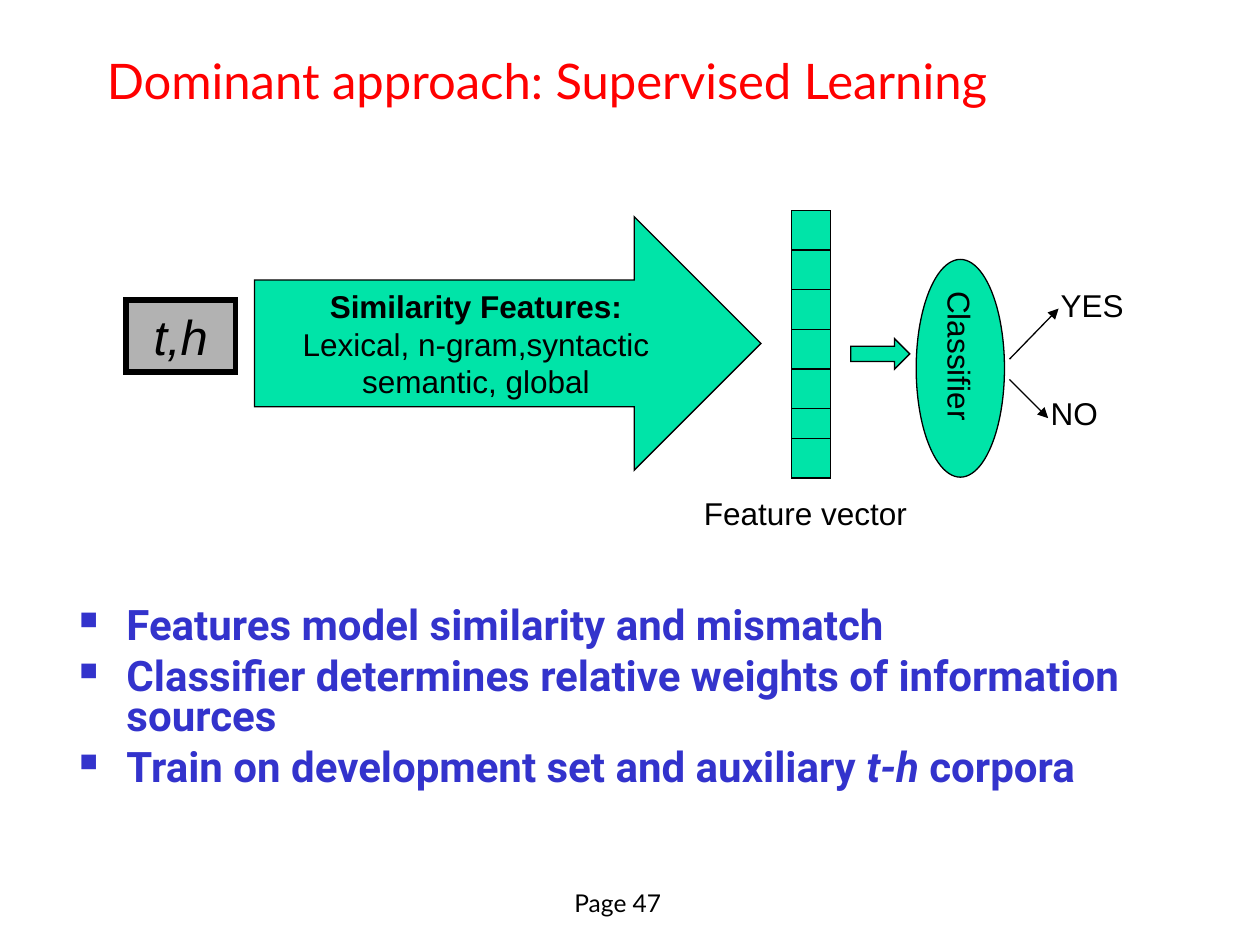
from lxml.etree import SubElement
from pptx import Presentation
from pptx.dml.color import RGBColor
from pptx.enum.shapes import MSO_CONNECTOR, MSO_SHAPE
from pptx.enum.text import MSO_ANCHOR, MSO_AUTO_SIZE, PP_ALIGN
from pptx.oxml.ns import qn
from pptx.util import Cm, Pt

BLACK, GREEN, GREY, RED, BLUE = "000000", "00E4A8", "B2B2B2", "FF0000", "3333CC"

TITLE = "Dominant approach: Supervised Learning"
FEATURES = [("Similarity Features:", True),
            ("Lexical, n-gram,syntactic", False),
            ("semantic, global", False)]
LABELS = [("Feature vector", (13.94, 9.83, 5.79, 1.02)),
          ("YES", (21.13, 5.64, 2.29, 1.02)),
          ("NO", (20.93, 7.82, 2.29, 1.02))]
OUTCOME_ARROWS = [((20.35, 7.24), (21.34, 6.22)),
                  ((20.35, 7.65), (21.13, 8.43))]
BULLETS = [[("Features model similarity and mismatch", False)],
           [("Classifier determines relative weights of information sources", False)],
           [("Train on development set and auxiliary ", False), ("t-h", True),
            (" corpora", False)]]
VECTOR_LEFT, VECTOR_TOP, VECTOR_WIDTH = 15.95, 4.24, 0.8
CELL_HEIGHTS = [0.8] * 5 + [0.6, 0.8]


def rgb(color):
    """Turn a hex string into a colour."""
    return RGBColor.from_string(color)


def style(paragraph, name, size, color=BLACK, bold=False, italic=False):
    """Set the font of a whole paragraph."""
    font = paragraph.font
    font.name, font.size, font.bold, font.italic = name, Pt(size), bold, italic
    font.color.rgb = rgb(color)


def add_block(slide, preset, box, fill=GREEN, line_width=0.75):
    """Add a filled preset shape with a sharp-cornered black outline."""
    block = slide.shapes.add_shape(preset, *map(Cm, box))
    block.shadow.inherit = False
    block.fill.solid()
    block.fill.fore_color.rgb = rgb(fill)
    block.line.color.rgb = rgb(BLACK)
    block.line.width = Pt(line_width)
    SubElement(block.line._get_or_add_ln(), qn("a:miter"), lim="800000")
    return block


def write_centred(block, lines, size=18, italic=False):
    """Write centred (text, bold) lines in a shape."""
    frame = block.text_frame
    for index, (text, bold) in enumerate(lines):
        paragraph = frame.add_paragraph() if index else frame.paragraphs[0]
        paragraph.text = text
        paragraph.alignment = PP_ALIGN.CENTER
        style(paragraph, "Arial", size, bold=bold, italic=italic)


def add_line(slide, start, end, arrow=False):
    """Add a thin black line, with an arrowhead if asked."""
    line = slide.shapes.add_connector(MSO_CONNECTOR.STRAIGHT, *map(Cm, start + end))
    line.line.color.rgb = rgb(BLACK)
    line.line.width = Pt(0.75)
    if arrow:
        SubElement(line.line._get_or_add_ln(), qn("a:tailEnd"), type="triangle")
    SubElement(line._element.spPr, qn("a:effectLst"))


def add_text(slide, box):
    """Add a wrapping text box and return its frame."""
    frame = slide.shapes.add_textbox(*map(Cm, box)).text_frame
    frame.word_wrap = True
    return frame


def add_label(slide, text, box, name="Arial", size=18):
    """Add a one-line black label."""
    frame = add_text(slide, box)
    frame.paragraphs[0].text = text
    style(frame.paragraphs[0], name, size)
    return frame


def add_title(slide):
    """Fill and place the title."""
    title = slide.shapes.title
    title.left, title.top, title.width, title.height = map(Cm, (1.9, -0.84, 21.6, 3.18))
    frame = title.text_frame
    frame.text = TITLE
    frame.auto_size = MSO_AUTO_SIZE.NONE
    frame.vertical_anchor = MSO_ANCHOR.BOTTOM
    frame.paragraphs[0].alignment = PP_ALIGN.LEFT
    style(frame.paragraphs[0], "Lato", 28, RED)


def add_bullets(slide):
    """Add the list of square-bulleted points."""
    frame = add_text(slide, (1.35, 12.14, 22.38, 3.3))
    for index, runs in enumerate(BULLETS):
        paragraph = frame.add_paragraph() if index else frame.paragraphs[0]
        paragraph.line_spacing = 0.8
        paragraph.space_before = Pt(6)
        properties = paragraph._p.get_or_add_pPr()
        properties.set("marL", str(Cm(0.95)))
        properties.set("indent", str(-Cm(0.95)))
        SubElement(SubElement(properties, qn("a:buClr")), qn("a:srgbClr"), val=BLUE)
        SubElement(properties, qn("a:buSzPct"), val="60000")
        SubElement(properties, qn("a:buChar"), char="■")
        style(paragraph, "Roboto", 24, BLUE, bold=True)
        for text, italic in runs:
            run = paragraph.add_run()
            run.text = text
            if italic:
                run.font.italic = True


def add_vector(slide):
    """Add the feature vector and the lines between its cells."""
    add_block(slide, MSO_SHAPE.RECTANGLE,
              (VECTOR_LEFT, VECTOR_TOP, VECTOR_WIDTH, sum(CELL_HEIGHTS)))
    for count in range(1, len(CELL_HEIGHTS)):
        y = VECTOR_TOP + sum(CELL_HEIGHTS[:count])
        add_line(slide, (VECTOR_LEFT, y), (VECTOR_LEFT + VECTOR_WIDTH, y))


def add_classifier(slide):
    """Add the oval with its word running downwards."""
    classifier = add_block(slide, MSO_SHAPE.OVAL, (18.47, 5.23, 1.78, 4.39))
    write_centred(classifier, [("Classifier", False)])
    frame = classifier.text_frame
    frame.margin_left = frame.margin_right = frame.margin_top = frame.margin_bottom = 0
    frame._txBody.bodyPr.set("vert", "eaVert")


def main():
    """Build and save the slide."""
    deck = Presentation()
    deck.slide_width, deck.slide_height = Cm(25.4), Cm(19.05)
    slide = deck.slides.add_slide(deck.slide_layouts[5])
    add_title(slide)
    page = add_label(slide, "Page 47", (11.33, 17.35, 2.74, 1.27), "Lato", 14)
    page.vertical_anchor = MSO_ANCHOR.BOTTOM
    add_bullets(slide)

    pair = add_block(slide, MSO_SHAPE.RECTANGLE, (2.54, 6.05, 2.21, 1.45), GREY, 3)
    write_centred(pair, [("t,h", False)], 28, italic=True)
    features = add_block(slide, MSO_SHAPE.RIGHT_ARROW, (5.13, 4.37, 10.21, 5.11))
    write_centred(features, FEATURES)
    add_vector(slide)
    add_classifier(slide)
    add_block(slide, MSO_SHAPE.RIGHT_ARROW, (17.15, 6.83, 1.19, 0.61))
    for start, end in OUTCOME_ARROWS:
        add_line(slide, start, end, arrow=True)
    for text, box in LABELS:
        add_label(slide, text, box)
    deck.save("out.pptx")


if __name__ == "__main__":
    main()
